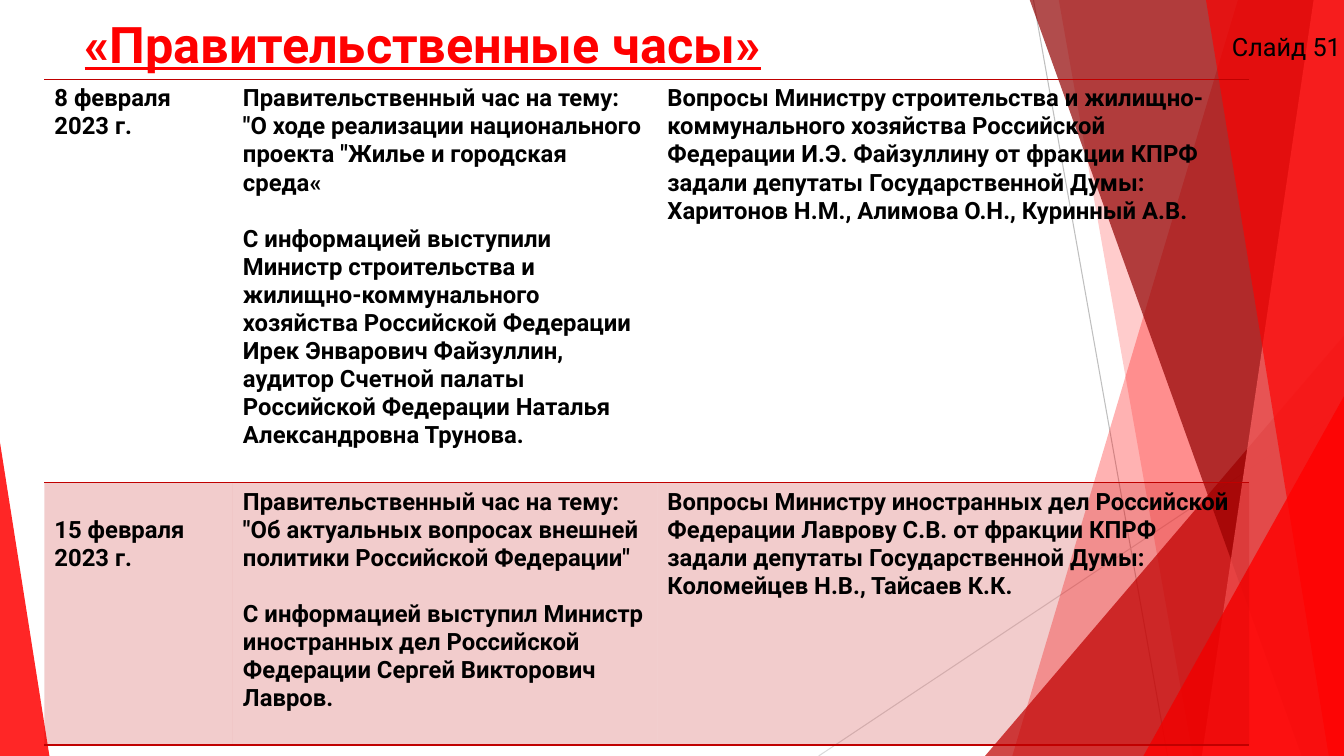
from lxml.etree import SubElement, fromstring
from pptx import Presentation
from pptx.dml.color import RGBColor
from pptx.enum.shapes import MSO_CONNECTOR, MSO_SHAPE
from pptx.enum.text import MSO_ANCHOR, PP_ALIGN
from pptx.oxml.ns import nsdecls, qn
from pptx.util import Inches, Pt

HUES = {"red": "FF0000", "dark": "C00000", "wine": "900000", "rose": "FF6666",
        "gray": "BFBFBF", "pale": "D9D9D9", "ink": "000000"}
PLAIN = "{2D5ABB26-0587-4C30-8999-92F81FD0307C}"
TOP, BASE, EDGE = -0.01, 7.5, 13.33


class Deck:
    """Holds the style and the current slide."""

    def __init__(self):
        self.prs = Presentation()
        self.prs.slide_width = Inches(EDGE)
        self.prs.slide_height = Inches(BASE)
        self.slide = self.prs.slides.add_slide(self.prs.slide_layouts[5])
        self.shapes = self.slide.shapes
        self.face = "Roboto"

    def font(self, para, size, hue="ink", bold=False, under=False):
        font = para.font
        font.name, font.size, font.bold = self.face, Pt(size), bold
        font.underline = under
        font.color.rgb = RGBColor.from_string(HUES[hue])

    def paint(self, fill, hue, alpha):
        fill.solid()
        fill.fore_color.rgb = RGBColor.from_string(HUES[hue])
        color = fill._xPr.find(qn("a:solidFill"))[0]
        SubElement(color, qn("a:alpha"), val=str(alpha * 1000))

    def finish(self, shape, hue, alpha):
        shape.shadow.inherit = False
        shape.line.fill.background()
        self.paint(shape.fill, hue, alpha)

    def line(self, start, end, hue):
        line = self.shapes.add_connector(
            MSO_CONNECTOR.STRAIGHT, *map(Inches, start + end))
        line.line.color.rgb = RGBColor.from_string(HUES[hue])
        line.line.width = Pt(0.75)
        SubElement(line._element.spPr, qn("a:effectLst"))

    def shard(self, head, foot, hue, alpha):
        pen = self.shapes.build_freeform(Inches(head), Inches(TOP))
        pen.add_line_segments([(Inches(x), Inches(y)) for x, y in (
            (EDGE, TOP), (EDGE, BASE), (foot, BASE))])
        self.finish(pen.convert_to_shape(), hue, alpha)

    def wedge(self, left, top, width, tip, hue, alpha):
        shape = self.shapes.add_shape(
            MSO_SHAPE.ISOSCELES_TRIANGLE, Inches(left), Inches(top),
            Inches(width), Inches(BASE - top))
        shape.adjustments[0] = tip
        self.finish(shape, hue, alpha)

    def title(self, text, box):
        title = self.shapes.title
        title.left, title.top, title.width, title.height = map(Inches, box)
        self.shapes._spTree.append(title._element)
        frame = title.text_frame
        frame.text, frame.word_wrap = text, True
        frame.vertical_anchor = MSO_ANCHOR.TOP
        para = frame.paragraphs[0]
        para.alignment = PP_ALIGN.LEFT
        self.font(para, 36, "red", True, True)

    def label(self, text, box):
        frame = self.shapes.add_textbox(*map(Inches, box)).text_frame
        frame.text, frame.word_wrap = text, False
        self.font(frame.paragraphs[0], 18)

    def border(self, cell, side):
        cell._tc.get_or_add_tcPr().insert(0, fromstring(
            f'<a:{side} {nsdecls("a")} w="12700"><a:solidFill>'
            f'<a:srgbClr val="{HUES["dark"]}"/></a:solidFill></a:{side}>'))

    def cell(self, cell, text, gap):
        cell.text = text
        for i, para in enumerate(cell.text_frame.paragraphs):
            self.font(para, 17, bold=True)
            if i:
                para.space_before = Pt(gap)

    def table(self, left, top, cols, rows, data):
        grid = self.shapes.add_table(
            len(rows), len(cols), Inches(left), Inches(top),
            Inches(sum(cols)), Inches(sum(rows))).table
        grid.first_row = grid.horz_banding = False
        grid._tbl.tblPr.find(qn("a:tableStyleId")).text = PLAIN
        for col, width in zip(grid.columns, cols):
            col.width = Inches(width)
        for r, (row, height) in enumerate(zip(grid.rows, rows)):
            row.height = Inches(height)
            for c, cell in enumerate(row.cells):
                self.cell(cell, data[r][c], 20 if c == 1 else 0)
                if r:
                    self.paint(cell.fill, "dark", 20)
                else:
                    cell.fill.background()
                self.border(cell, "lnB")
                if not r:
                    self.border(cell, "lnT")
        return grid


DATA = [
    ["8 февраля 2023 г.",
     "Правительственный час на тему: \"О ходе реализации национального "
     "проекта \"Жилье и городская среда«\n"
     "С информацией выступили Министр строительства и "
     "жилищно-коммунального хозяйства Российской Федерации Ирек Энварович "
     "Файзуллин, аудитор Счетной палаты Российской Федерации Наталья "
     "Александровна Трунова.",
     "Вопросы Министру строительства и жилищно-коммунального хозяйства "
     "Российской Федерации И.Э. Файзуллину от фракции КПРФ задали депутаты "
     "Государственной Думы: Харитонов Н.М., Алимова О.Н., Куринный А.В."],
    ["15 февраля 2023 г.",
     "Правительственный час на тему: \"Об актуальных вопросах внешней "
     "политики Российской Федерации\"\n"
     "С информацией выступил Министр иностранных дел Российской Федерации "
     "Сергей Викторович Лавров.",
     "Вопросы Министру иностранных дел Российской Федерации Лаврову С.В. "
     "от фракции КПРФ задали депутаты Государственной Думы:\n"
     "Коломейцев Н.В., Тайсаев К.К."],
]


def main():
    deck = Deck()
    deck.line((10.25, 0), (11.58, BASE), "gray")
    deck.line((EDGE, 4.03), (8.12, BASE), "pale")
    deck.shard(12.28, 10.04, "red", 30)
    deck.shard(10.5, 11.83, "red", 20)
    deck.wedge(9.77, 3.33, 3.56, 1, "dark", 72)
    deck.shard(10.21, 12.91, "wine", 70)
    deck.shard(13.03, 11.92, "rose", 70)
    deck.shard(11.96, 13.18, "red", 65)
    deck.wedge(11.34, 3.93, 1.99, 1, "red", 80)
    deck.wedge(0, 4.39, 0.49, 0, "red", 85)
    deck.title("«Правительственные часы»", (0.74, 0.08, 9.4, 1.44))
    grid = deck.table(0.44, 0.79, (1.87, 4.21, 5.87), (4, 2.6), DATA)
    grid.cell(1, 0).margin_top = Inches(0.33)
    deck.label("Слайд 51", (12.12, 0.26, 1.33, 0.4))
    deck.prs.save("out.pptx")


if __name__ == "__main__":
    main()
